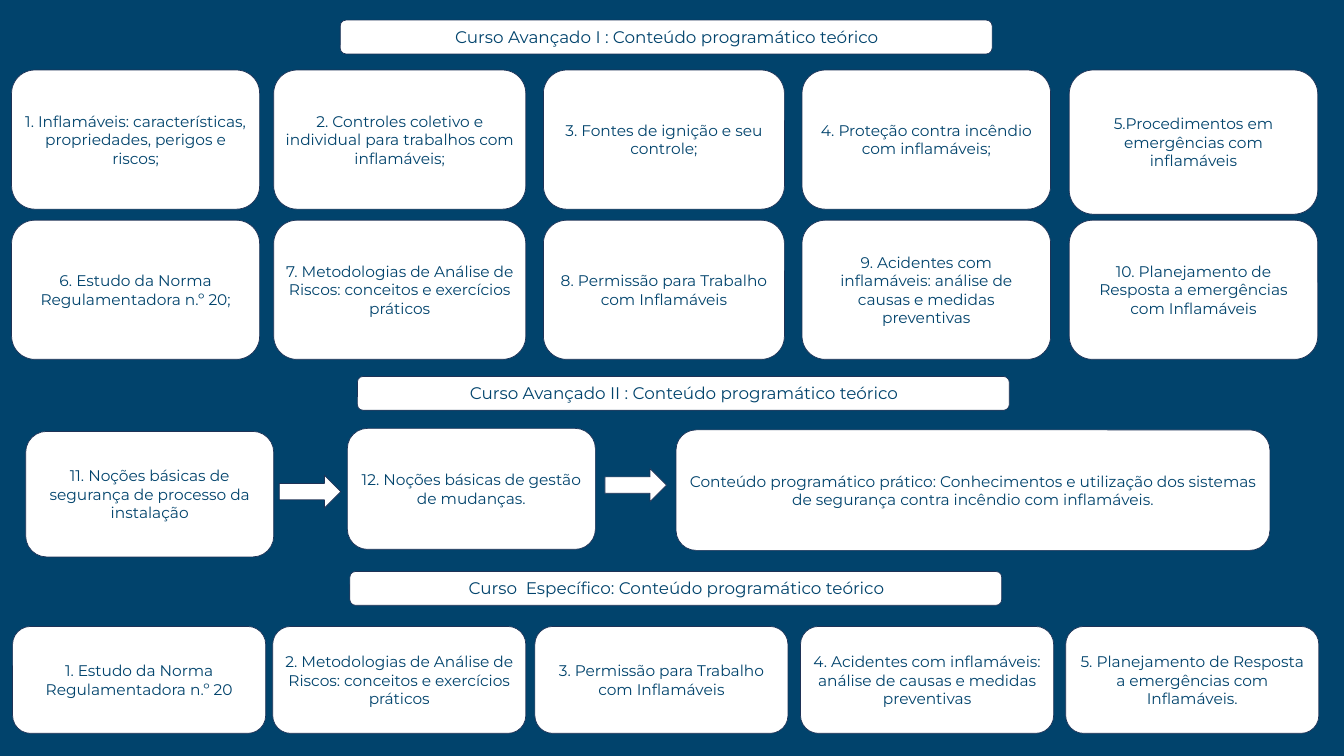
from collections import namedtuple
from dataclasses import dataclass

from pptx import Presentation
from pptx.dml.color import RGBColor
from pptx.enum.shapes import MSO_SHAPE
from pptx.enum.text import MSO_ANCHOR, PP_ALIGN
from pptx.util import Inches, Pt

Box = namedtuple("Box", "left top width height")


@dataclass(frozen=True)
class Theme:
    navy: RGBColor = RGBColor(0x01, 0x43, 0x6C)
    outline: RGBColor = RGBColor(0x1E, 0x32, 0x56)
    white: RGBColor = RGBColor(0xFF, 0xFF, 0xFF)
    font: str = "Montserrat"
    heading_size: Pt = Pt(24)
    card_size: Pt = Pt(22)


THEME = Theme()
PAGE = Box(0, 0, 26.66, 15)

# Column offsets and widths inside each row of cards
ADVANCED_COLUMNS = [(0, 4.92), (5.2, 5), (10.55, 4.78), (15.68, 4.93), (20.98, 4.93)]
SPECIFIC_COLUMNS = [(0, 5.02), (5.16, 5.02), (10.36, 5.02), (15.63, 5.02), (20.89, 5.02)]

ADVANCED_ROW_1 = [
    "1. Inflamáveis: características, propriedades, perigos e riscos;",
    "2. Controles coletivo e individual para trabalhos com inflamáveis;",
    "3. Fontes de ignição e seu controle;",
    "4. Proteção contra incêndio com inflamáveis;",
    "5.Procedimentos em emergências com inflamáveis",
]
ADVANCED_ROW_2 = [
    "6. Estudo da Norma Regulamentadora n.º 20;",
    "7. Metodologias de Análise de Riscos: conceitos e exercícios práticos",
    "8. Permissão para Trabalho com Inflamáveis",
    "9. Acidentes com inflamáveis: análise de causas e medidas preventivas",
    "10. Planejamento de Resposta a emergências com Inflamáveis",
]
# Text and box (relative to the section) of each step
ADVANCED_STEPS = [
    ("11. Noções básicas de segurança de processo da instalação", Box(0, 0.06, 4.92, 2.49)),
    ("12. Noções básicas de gestão de mudanças.", Box(6.38, 0, 4.92, 2.4)),
    ("Conteúdo programático prático: Conhecimentos e utilização dos sistemas "
     "de segurança contra incêndio com inflamáveis.", Box(12.9, 0.03, 11.78, 2.39)),
]
STEP_ARROWS = [Box(5.03, 0.93, 1.22, 0.65), Box(11.49, 0.8, 1.22, 0.65)]
SPECIFIC_ROW = [
    "1. Estudo da Norma Regulamentadora n.º 20",
    "2. Metodologias de Análise de Riscos: conceitos e exercícios práticos",
    "3. Permissão para Trabalho com Inflamáveis",
    "4. Acidentes com inflamáveis: análise de causas e medidas preventivas",
    "5. Planejamento de Resposta a emergências com Inflamáveis.",
]


def inches(box):
    return [Inches(round(length, 2)) for length in box]


def within(box, part):
    return Box(box.left + part.left, box.top + part.top, part.width, part.height)


def apply(target, formats):
    for name, value in formats.items():
        setattr(target, name, value)


def add_panel(slide, preset, box, fill=THEME.white, line=THEME.outline):
    panel = slide.shapes.add_shape(preset, *inches(box))
    panel.shadow.inherit = False
    panel.fill.solid()
    panel.fill.fore_color.rgb = fill
    panel.line.color.rgb = line
    panel.line.width = Pt(1)
    return panel


def write(holder, text, size):
    frame = holder.text_frame
    frame.text = text
    apply(frame, {"word_wrap": True, "vertical_anchor": MSO_ANCHOR.MIDDLE})
    paragraph = frame.paragraphs[0]
    paragraph.alignment = PP_ALIGN.CENTER
    apply(paragraph.runs[0].font, {"name": THEME.font, "size": size, "bold": False})
    paragraph.runs[0].font.color.rgb = THEME.navy


def add_card(slide, text, box):
    write(add_panel(slide, MSO_SHAPE.ROUNDED_RECTANGLE, box), text, THEME.card_size)


def add_heading(slide, text, box, title=None):
    """A white banner with its label; the slide title may serve as the label."""
    add_panel(slide, MSO_SHAPE.ROUNDED_RECTANGLE, box)
    label_box = inches(within(box, Box(-0.19, 0.08, 13.33, 0.5)))
    if title is None:
        label = slide.shapes.add_textbox(*label_box)
    else:
        label = title
        apply(label, dict(zip(("left", "top", "width", "height"), label_box)))
        slide.shapes._spTree.append(label._element)  # in front of its banner
    write(label, text, THEME.heading_size)


def add_card_row(slide, texts, columns, box):
    for text, (offset, width) in zip(texts, columns):
        add_card(slide, text, within(box, Box(offset, 0, width, box.height)))


def add_steps(slide, box):
    for text, part in ADVANCED_STEPS:
        add_card(slide, text, within(box, part))
    for part in STEP_ARROWS:
        add_panel(slide, MSO_SHAPE.RIGHT_ARROW, within(box, part))


def main():
    deck = Presentation()
    deck.slide_width, deck.slide_height = Inches(PAGE.width), Inches(PAGE.height)
    slide = deck.slides.add_slide(deck.slide_layouts[5])
    add_panel(slide, MSO_SHAPE.RECTANGLE, PAGE, THEME.navy, THEME.navy)

    # Advanced course I: two rows, the last card of the first one taller
    add_heading(slide, "Curso Avançado I : Conteúdo programático teórico",
                Box(6.75, 0.4, 12.93, 0.67), slide.shapes.title)
    add_card_row(slide, ADVANCED_ROW_1[:4], ADVANCED_COLUMNS, Box(0.23, 1.39, 25.91, 2.76))
    add_card_row(slide, ADVANCED_ROW_1[4:], ADVANCED_COLUMNS[4:], Box(0.23, 1.39, 25.91, 2.86))
    add_card_row(slide, ADVANCED_ROW_2, ADVANCED_COLUMNS, Box(0.23, 4.37, 25.91, 2.76))

    # Advanced course II: steps joined by arrows
    add_heading(slide, "Curso Avançado II : Conteúdo programático teórico",
                Box(7.09, 7.47, 12.93, 0.67))
    add_steps(slide, Box(0.51, 8.5, 24.68, 2.55))

    # Specific course: one row
    add_heading(slide, "Curso  Específico: Conteúdo programático teórico",
                Box(6.94, 11.34, 12.93, 0.67))
    add_card_row(slide, SPECIFIC_ROW, SPECIFIC_COLUMNS, Box(0.25, 12.43, 25.91, 2.12))

    deck.save("out.pptx")


if __name__ == "__main__":
    main()
